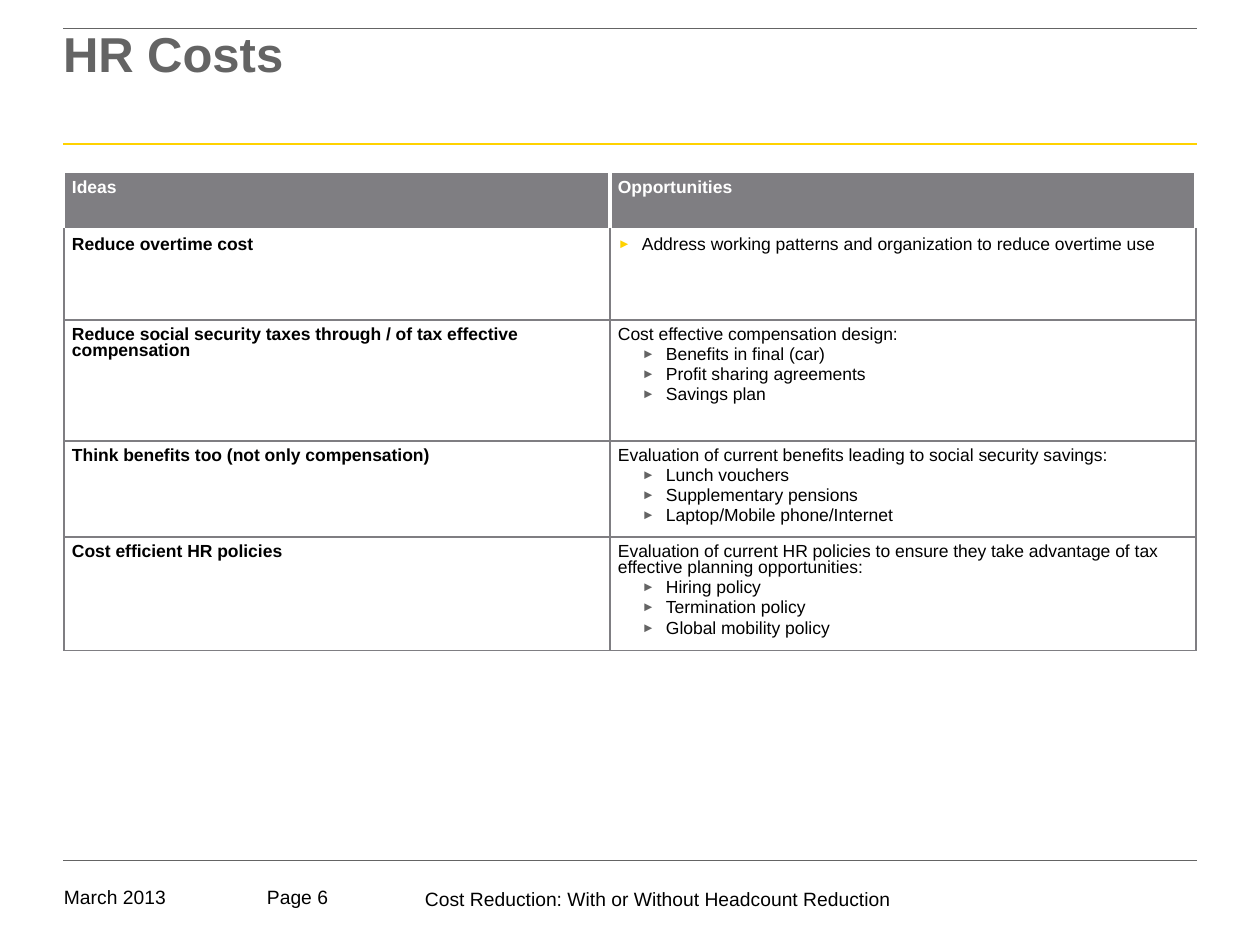
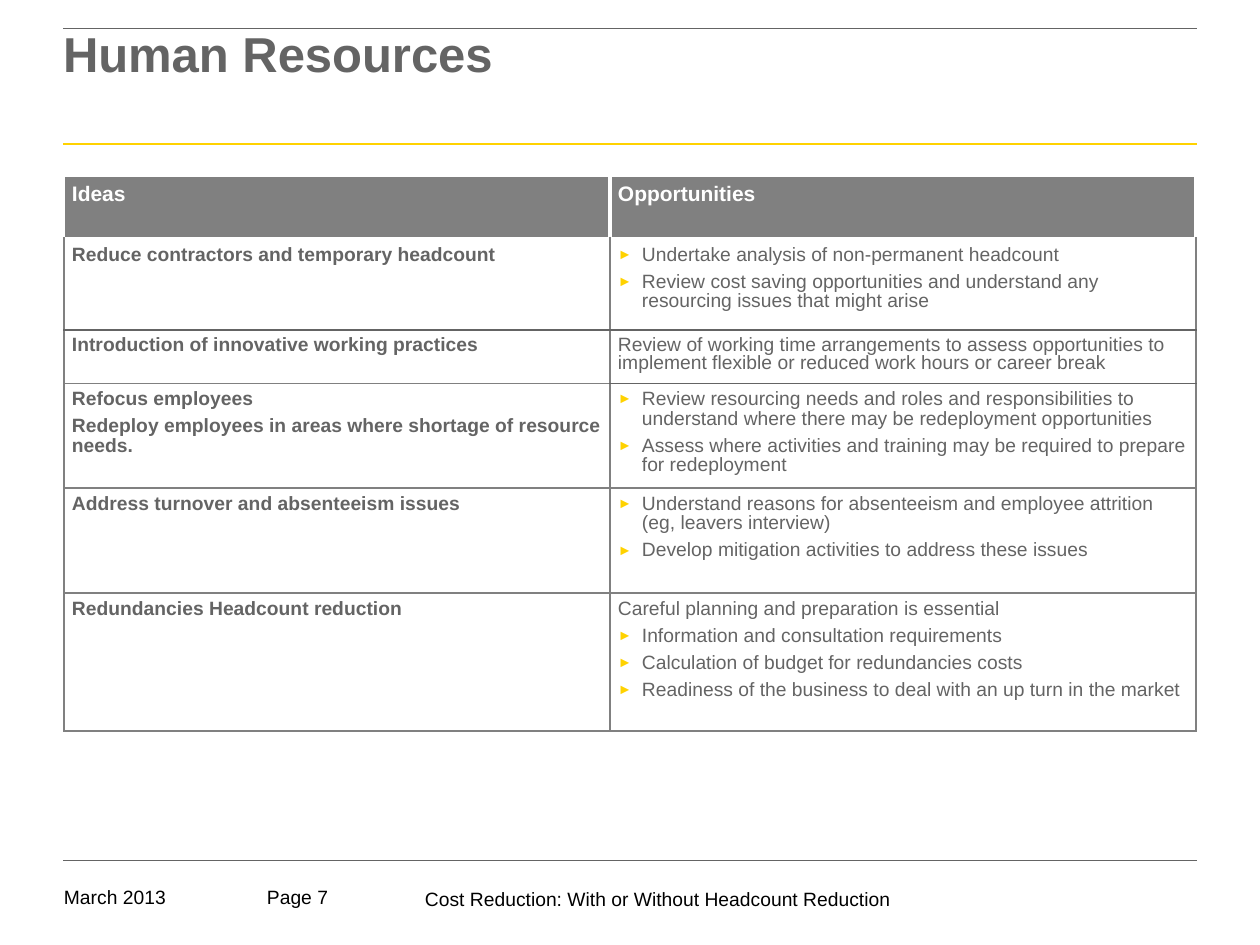
from dataclasses import dataclass
from typing import NamedTuple

from lxml import etree
from pptx import Presentation
from pptx.dml.color import RGBColor
from pptx.enum.shapes import MSO_CONNECTOR
from pptx.enum.text import MSO_ANCHOR, MSO_AUTO_SIZE, PP_ALIGN
from pptx.oxml.ns import qn
from pptx.util import Emu, Pt

# Shared style
PX_PER_INCH = 126
FONT = "Arial"
BLACK, WHITE, SLATE, YELLOW = "000000", "FFFFFF", "646464", "FFD200"
LEFT, RIGHT = 63, 1197
COLUMN_WIDTHS = (546, 586)
TABLE_LEFT = 64
INDENT = 24
HEADINGS = ("Ideas", "Opportunities")


class Rule(NamedTuple):
    y: int
    color: str
    weight: float


class Footer(NamedTuple):
    text: str
    left: int
    top: int
    width: int


class Spacing(NamedTuple):
    line: float
    gap: float  # share of the text size, before and after


class Item(NamedTuple):
    text: str
    depth: int = 0  # 0 plain, 1 yellow bullet, 2 grey bullet


class Edge(NamedTuple):
    color: str
    weight: float


TIGHT, LOOSE = Spacing(0.85, 0.1), Spacing(0.9, 0.2)
BULLET_COLORS = {1: YELLOW, 2: SLATE}
WHITE_EDGE = Edge(WHITE, 2.25)
RULES = (Rule(144, YELLOW, 1), Rule(860, SLATE, 0.25), Rule(28, SLATE, 0.5))


@dataclass(frozen=True)
class Row:
    height: int
    ideas: tuple[str, ...]
    opportunities: tuple[Item, ...]
    spacing: Spacing = TIGHT
    dark_below: tuple[int, ...] = ()  # columns with a darker lower edge


@dataclass(frozen=True)
class Page:
    number: int
    title: str
    table_top: int
    header_height: int
    header_size: int
    body_size: int
    body_color: str
    grey: str
    rows: tuple[Row, ...]


def bullets(depth: int, *texts: str) -> tuple[Item, ...]:
    return tuple(Item(text, depth) for text in texts)


PAGES = (
    Page(6, "HR Costs", 171, 59, 10, 10, BLACK, "7F7E82", (
        Row(90, ("Reduce overtime cost",),
            bullets(1, "Address working patterns and organization to reduce overtime use")),
        Row(121, ("Reduce social security taxes through / of tax effective compensation",),
            (Item("Cost effective compensation design:"),
             *bullets(2, "Benefits in final (car)", "Profit sharing agreements",
                      "Savings plan"))),
        Row(92, ("Think benefits too (not only compensation)",),
            (Item("Evaluation of current benefits leading to social security savings:"),
             *bullets(2, "Lunch vouchers", "Supplementary pensions",
                      "Laptop/Mobile phone/Internet"))),
        Row(108, ("Cost efficient HR policies",),
            (Item("Evaluation of current HR policies to ensure they take advantage of tax "
                  "effective planning opportunities:"),
             *bullets(2, "Hiring policy", "Termination policy", "Global mobility policy"))),
    )),
    Page(7, "Human Resources", 175, 64, 12, 11, SLATE, "808080", (
        Row(91, ("Reduce contractors and temporary headcount",),
            bullets(1, "Undertake analysis of non-permanent headcount",
                    "Review cost saving opportunities and understand any resourcing issues "
                    "that might arise"), LOOSE, (0, 1)),
        Row(51, ("Introduction of innovative working practices",),
            (Item("Review of working time arrangements to assess opportunities to implement "
                  "flexible or reduced work hours or career break"),), TIGHT, (1,)),
        Row(100, ("Refocus employees",
                  "Redeploy employees in areas where shortage of resource needs."),
            bullets(1, "Review resourcing needs and roles and responsibilities to understand "
                    "where there may be redeployment opportunities",
                    "Assess where activities and training may be required to prepare for "
                    "redeployment"), LOOSE),
        Row(105, ("Address turnover and absenteeism issues",),
            bullets(1, "Understand reasons for absenteeism and employee attrition "
                    "(eg, leavers interview)",
                    "Develop mitigation activities to address these issues"), LOOSE),
        Row(138, ("Redundancies Headcount reduction",),
            (Item("Careful planning and preparation is essential"),
             *bullets(1, "Information and consultation requirements",
                      "Calculation of budget for redundancies costs",
                      "Readiness of the business to deal with an up turn in the market")), LOOSE),
    )),
)


def px(length: int) -> Emu:
    return Emu(round(length * 914400 / PX_PER_INCH))


def rgb(color: str) -> RGBColor:
    return RGBColor.from_string(color)


def add_span(para, text: str, size: float, color: str, bold: bool = False) -> None:
    span = para.add_run()
    span.text = text
    span.font.name = FONT
    span.font.size = Pt(size)
    span.font.bold = bold
    span.font.color.rgb = rgb(color)


def set_margins(holder, left: int, top: int, right: int, bottom: int) -> None:
    holder.margin_left, holder.margin_top = px(left), px(top)
    holder.margin_right, holder.margin_bottom = px(right), px(bottom)


def set_bullet(para, depth: int) -> None:
    properties = para._p.get_or_add_pPr()
    properties.set("marL", str(px(INDENT * depth)))
    properties.set("indent", str(-px(INDENT) if depth else 0))
    if depth:
        color = etree.SubElement(properties, qn("a:buClr"))
        etree.SubElement(color, qn("a:srgbClr"), val=BULLET_COLORS[depth])
        etree.SubElement(properties, qn("a:buSzPct"), val="75000")
        etree.SubElement(properties, qn("a:buFont"), typeface=FONT)
        etree.SubElement(properties, qn("a:buChar"), char="►")


def set_edges(cell, left: Edge, right: Edge, top: Edge, bottom: Edge) -> None:
    properties = cell._tc.get_or_add_tcPr()
    sides = zip(("a:lnL", "a:lnR", "a:lnT", "a:lnB"), (left, right, top, bottom))
    for position, (tag, edge) in enumerate(sides):
        line = etree.Element(qn(tag), w=str(Pt(edge.weight)))
        fill = etree.SubElement(line, qn("a:solidFill"))
        etree.SubElement(fill, qn("a:srgbClr"), val=edge.color)
        properties.insert(position, line)


def fill_cell(cell, items: tuple[Item, ...], size: int, color: str, bold: bool,
              spacing: Spacing | None = None) -> None:
    set_margins(cell, 8, 7, 7, 7)
    frame = cell.text_frame
    for index, item in enumerate(items):
        para = frame.add_paragraph() if index else frame.paragraphs[0]
        set_bullet(para, item.depth)
        if spacing:
            para.line_spacing = spacing.line
            para.space_after = Pt(size * spacing.gap)
            if index:
                para.space_before = Pt(size * spacing.gap)
        add_span(para, item.text, size, color, bold)


def add_ideas_table(slide, page: Page) -> None:
    heights = (page.header_height, *(row.height for row in page.rows))
    table = slide.shapes.add_table(
        len(heights), len(COLUMN_WIDTHS), px(TABLE_LEFT), px(page.table_top),
        px(sum(COLUMN_WIDTHS)), px(sum(heights))).table
    table.first_row = table.horz_banding = False
    for column, width in zip(table.columns, COLUMN_WIDTHS):
        column.width = px(width)
    for table_row, height in zip(table.rows, heights):
        table_row.height = px(height)

    # Header row
    for column, heading in enumerate(HEADINGS):
        cell = table.cell(0, column)
        fill_cell(cell, (Item(heading),), page.header_size, WHITE, True)
        cell.fill.solid()
        cell.fill.fore_color.rgb = rgb(page.grey)
        outer = WHITE_EDGE if column else Edge(WHITE, 1)
        set_edges(cell, outer, WHITE_EDGE, WHITE_EDGE, WHITE_EDGE)

    # Body rows: each upper edge repeats the lower edge of the row above
    grey_edge = Edge(page.grey, 1)
    upper = [WHITE_EDGE] * len(HEADINGS)
    for number, row in enumerate(page.rows, start=1):
        for column, items in enumerate((bullets(0, *row.ideas), row.opportunities)):
            cell = table.cell(number, column)
            fill_cell(cell, items, page.body_size, page.body_color, column == 0, row.spacing)
            cell.fill.background()
            lower = Edge(SLATE, 1) if column in row.dark_below else grey_edge
            set_edges(cell, grey_edge, grey_edge, upper[column], lower)
            upper[column] = lower


def add_rule(slide, rule: Rule) -> None:
    line = slide.shapes.add_connector(
        MSO_CONNECTOR.STRAIGHT, px(LEFT), px(rule.y), px(RIGHT), px(rule.y))
    line.line.color.rgb = rgb(rule.color)
    line.line.width = Pt(rule.weight)
    etree.SubElement(line._element.spPr, qn("a:effectLst"))


def add_footer(slide, footer: Footer) -> None:
    box = slide.shapes.add_textbox(px(footer.left), px(footer.top), px(footer.width), px(24))
    frame = box.text_frame
    frame.word_wrap = True
    set_margins(frame, 0, 0, 0, 0)
    add_span(frame.paragraphs[0], footer.text, 11, BLACK)


def set_title(slide, text: str) -> None:
    title = slide.shapes.title
    title.left, title.top = px(LEFT), px(28)
    title.width, title.height = px(RIGHT - LEFT), px(118)
    frame = title.text_frame
    frame.auto_size = MSO_AUTO_SIZE.NONE
    frame.vertical_anchor = MSO_ANCHOR.TOP
    set_margins(frame, 0, 5, 0, 0)
    para = frame.paragraphs[0]
    para.alignment = PP_ALIGN.LEFT
    para.line_spacing = 0.85
    add_span(para, text, 28, SLATE, True)


def add_page(deck, page: Page) -> None:
    slide = deck.slides.add_slide(deck.slide_layouts[5])
    footers = (
        Footer("March 2013", 64, 885, 178),
        Footer("Cost Reduction: With or Without Headcount Reduction", 425, 887, 493),
        Footer(f"Page {page.number}", 267, 885, 92),
    )
    for footer in footers:
        add_footer(slide, footer)
    for rule in RULES:
        add_rule(slide, rule)
    set_title(slide, page.title)
    add_ideas_table(slide, page)


def main() -> None:
    deck = Presentation()
    deck.slide_width, deck.slide_height = px(1260), px(945)
    for page in PAGES:
        add_page(deck, page)
    deck.save("out.pptx")


if __name__ == "__main__":
    main()
